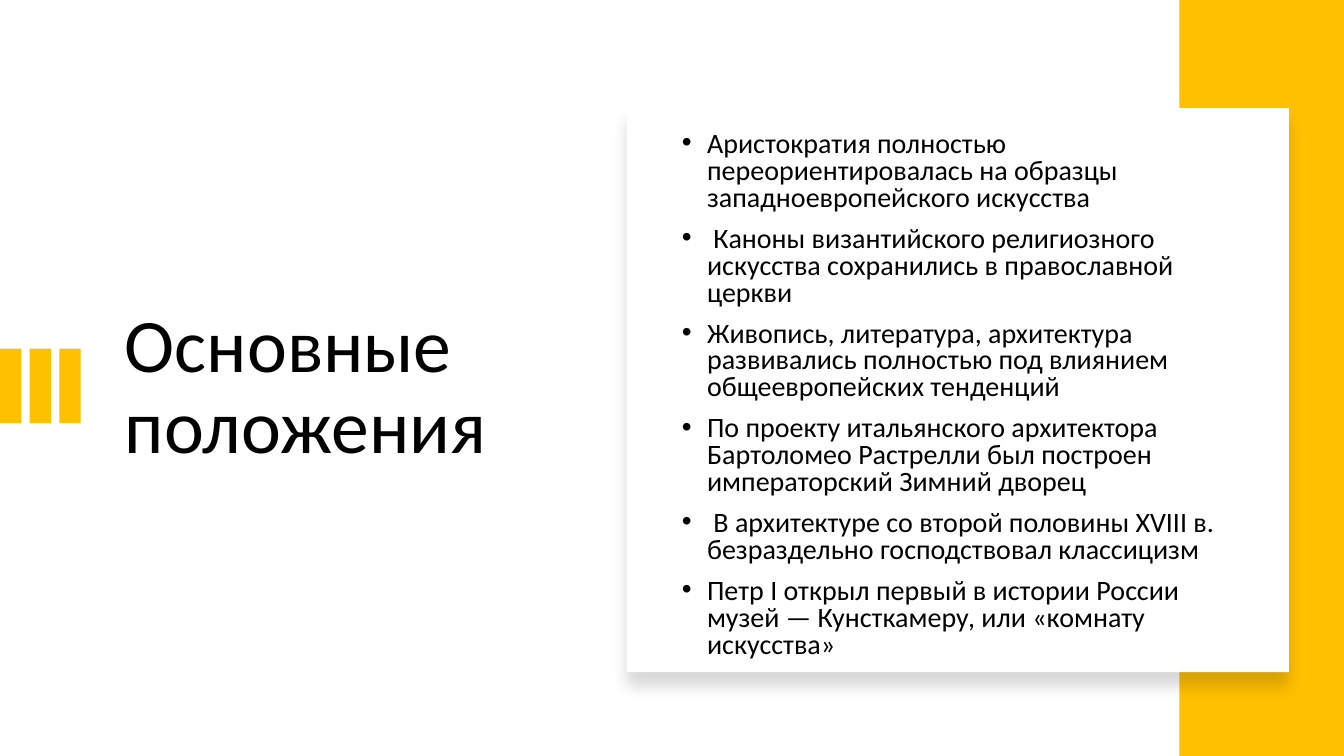
from lxml import etree
from pptx import Presentation
from pptx.dml.color import RGBColor
from pptx.enum.shapes import MSO_SHAPE
from pptx.enum.text import MSO_ANCHOR, MSO_AUTO_SIZE, PP_ALIGN
from pptx.oxml.ns import qn
from pptx.util import Pt

RECTANGLE = MSO_SHAPE.RECTANGLE
MIDDLE = MSO_ANCHOR.MIDDLE
NO_AUTOFIT = MSO_AUTO_SIZE.NONE
LEFT = PP_ALIGN.LEFT

FONT = "Calibri"
COLORS = {"accent": "FFC000", "card": "FFFFFF", "text": "000000"}
TITLE_ONLY_LAYOUT = 5
BAR_COUNT = 3
BAR_PITCH = 21.2

TITLE = "Основные положения"
POINTS = [
    "Аристократия полностью переориентировалась на образцы западноевропейского искусства",
    " Каноны византийского религиозного искусства сохранились в православной церкви",
    "Живопись, литература, архитектура развивались полностью под влиянием общеевропейских тенденций",
    "По проекту итальянского архитектора Бартоломео Растрелли был построен императорский Зимний дворец",
    " В архитектуре со второй половины XVIII в. безраздельно господствовал классицизм",
    "Петр І открыл первый в истории России музей — Кунсткамеру, или «комнату искусства»",
]


def add_rectangle(shapes, left, top, width, height, color):
    """Add a plain filled rectangle without outline or shadow."""
    shape = shapes.add_shape(RECTANGLE, Pt(left), Pt(top), Pt(width), Pt(height))
    shape.shadow.inherit = False
    shape.fill.solid()
    shape.fill.fore_color.rgb = RGBColor.from_string(COLORS[color])
    shape.line.fill.background()
    return shape


def add_soft_shadow(shape):
    """Give a shape a faint shadow that falls straight down."""
    effects = shape.element.spPr.find(qn("a:effectLst"))
    shadow = etree.SubElement(
        effects, qn("a:outerShdw"), blurRad=str(Pt(11)), dist=str(Pt(10)),
        dir="5400000", algn="t", rotWithShape="0")
    color = etree.SubElement(shadow, qn("a:srgbClr"), val=COLORS["text"])
    etree.SubElement(color, qn("a:alpha"), val="15000")


def format_paragraph(paragraph, size, line_spacing):
    """Set the alignment, line spacing and font of a paragraph."""
    paragraph.alignment = LEFT
    paragraph.line_spacing = line_spacing
    for run in paragraph.runs:
        run.font.name = FONT
        run.font.size = Pt(size)
        run.font.color.rgb = RGBColor.from_string(COLORS["text"])


def add_bullet(paragraph, indent):
    """Give a paragraph a round bullet with a hanging indent."""
    properties = paragraph._p.get_or_add_pPr()
    properties.set("marL", str(Pt(indent)))
    properties.set("indent", str(Pt(-indent)))
    etree.SubElement(properties, qn("a:buFont"), typeface="Arial")
    etree.SubElement(properties, qn("a:buChar"), char="•")


def prepare_text_frame(text_frame):
    """Wrap the text and centre it vertically at a fixed size."""
    text_frame.word_wrap = True
    text_frame.auto_size = NO_AUTOFIT
    text_frame.vertical_anchor = MIDDLE


def set_title(slide):
    """Place and format the slide title."""
    title = slide.shapes.title
    title.left, title.top = Pt(82), Pt(105)
    title.width, title.height = Pt(307), Pt(345)
    title.text_frame.text = TITLE
    prepare_text_frame(title.text_frame)
    format_paragraph(title.text_frame.paragraphs[0], 54, 0.9)


def add_accent_bars(slide):
    """Add the group of equally spaced bars at the left edge."""
    group = slide.shapes.add_group_shape()
    for index in range(BAR_COUNT):
        add_rectangle(group.shapes, index * BAR_PITCH, 249, 15.3, 53.3, "accent")


def add_points(slide):
    """Add the bulleted list of key points."""
    box = slide.shapes.add_textbox(Pt(480), Pt(85.5), Pt(414), Pt(394.5))
    text_frame = box.text_frame
    prepare_text_frame(text_frame)
    text_frame.text = "\n".join(POINTS)
    for paragraph in text_frame.paragraphs:
        format_paragraph(paragraph, 20, 0.8)
        paragraph.space_before = Pt(10)
        add_bullet(paragraph, 18)


def main():
    """Build the slide and save the presentation."""
    presentation = Presentation()
    presentation.slide_width, presentation.slide_height = Pt(960), Pt(540)
    slide = presentation.slides.add_slide(
        presentation.slide_layouts[TITLE_ONLY_LAYOUT])
    set_title(slide)
    add_accent_bars(slide)
    add_rectangle(slide.shapes, 842.4, 0, 117.6, 540, "accent")
    card = add_rectangle(slide.shapes, 447.8, 77.2, 473, 403, "card")
    add_soft_shadow(card)
    add_points(slide)
    presentation.save("out.pptx")


if __name__ == "__main__":
    main()
